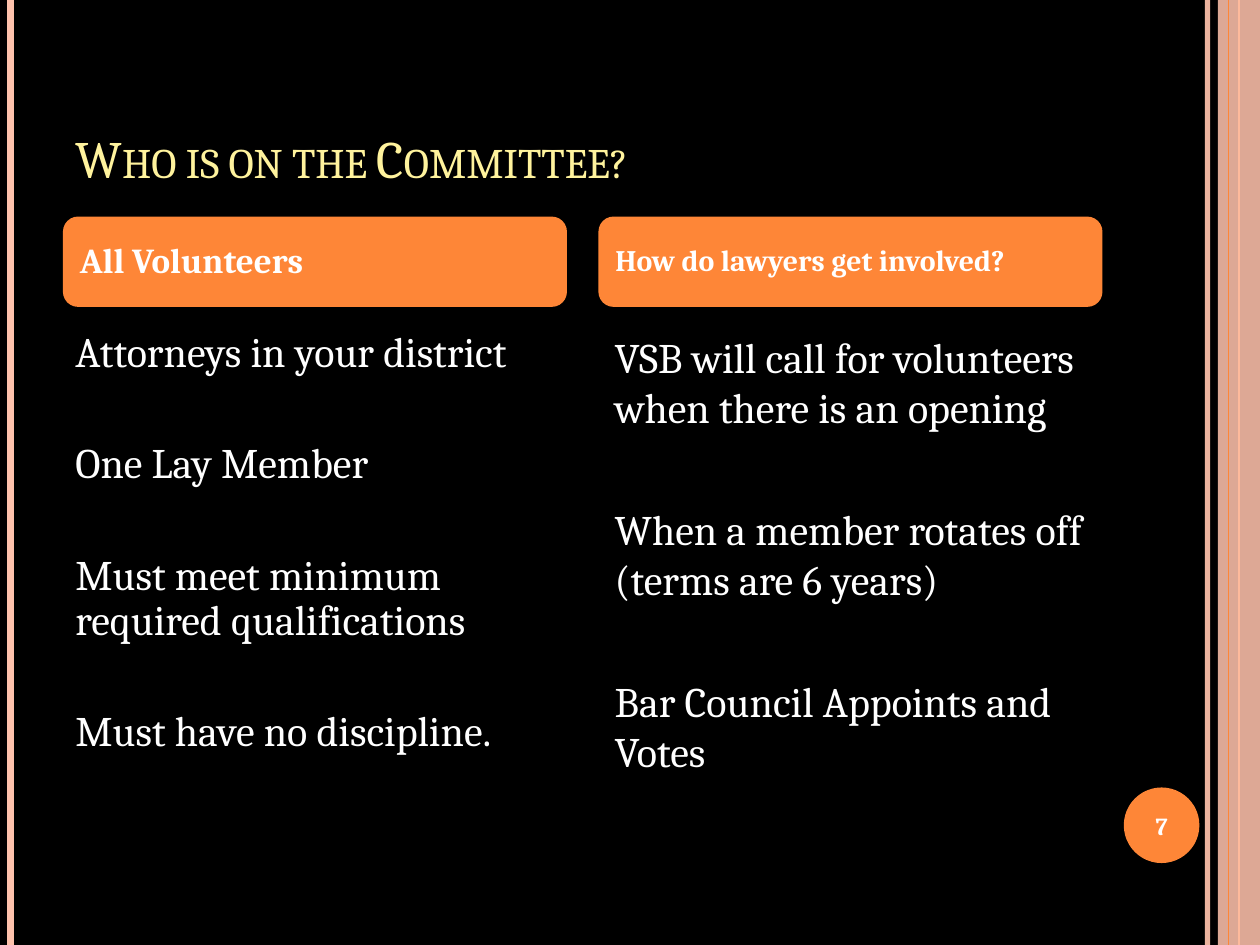
from pptx import Presentation
from pptx.dml.color import RGBColor as RGB
from pptx.enum.shapes import MSO_CONNECTOR as CONN, MSO_SHAPE as SHAPE
from pptx.enum.text import MSO_ANCHOR as ANCHOR, MSO_AUTO_SIZE as FIT, PP_ALIGN as ALIGN
from pptx.oxml.ns import qn
from pptx.util import Pt
from lxml import etree

COLORS = {"bg": "000000", "orange": "FE8637", "peach": "FEC2AC",
          "title": "FFF39D", "text": "FFFFFF"}
FONT = "Cambria"
W, H = 720, 540


def color(name):
    return RGB.from_string(COLORS[name])


def set_alpha(fill, percent):
    clr = fill._xPr.find(qn("a:solidFill"))[0]
    etree.SubElement(clr, qn("a:alpha")).set("val", str(percent * 1000))


def add_block(s, kind, box, fill):
    sp = s.shapes.add_shape(kind, *map(Pt, box))
    sp.shadow.inherit = False
    sp.fill.solid()
    sp.fill.fore_color.rgb = color(fill)
    sp.line.fill.background()
    return sp


def add_rule(s, x, name, width, alpha=None):
    ln = s.shapes.add_connector(CONN.STRAIGHT, Pt(x), 0, Pt(x), Pt(H))
    ln.line.width = Pt(width)
    ln.line.color.rgb = color(name)
    if alpha:
        set_alpha(ln.line.fill, alpha)
    etree.SubElement(ln._element.spPr, qn("a:effectLst"))


def write(tf, lines, size, anchor=ANCHOR.TOP, align=ALIGN.LEFT, name="text",
          bold=False, spacing=1.0, gap=0):
    frame = {"word_wrap": True, "auto_size": FIT.NONE, "vertical_anchor": anchor,
             "margin_left": Pt(7.2), "margin_right": Pt(7.2),
             "margin_top": Pt(3.6), "margin_bottom": Pt(3.6)}
    for key, value in frame.items():
        setattr(tf, key, value)
    for i, line in enumerate(lines):
        p = tf.paragraphs[0] if i == 0 else tf.add_paragraph()
        p.alignment, p.line_spacing = align, spacing
        p.space_before = Pt(gap if i else 0)
        r = p.add_run()
        r.text = line
        for key, value in {"name": FONT, "size": Pt(size), "bold": bold}.items():
            setattr(r.font, key, value)
        r.font.color.rgb = color(name)


def add_borders(s):
    add_rule(s, 690, "peach", 3, 93)
    add_rule(s, 6, "peach", 4.5)
    add_rule(s, 708, "orange", 1.5)
    band = add_block(s, SHAPE.RECTANGLE, (696, 0, W - 696, H), "peach")
    set_alpha(band.fill, 87)
    add_rule(s, 702, "orange", 0.75)


def add_title(s, box, text):
    sp = s.shapes.title
    sp.left, sp.top, sp.width, sp.height = map(Pt, box)
    write(sp.text_frame, [text], 30, ANCHOR.BOTTOM, name="title")
    sp.text_frame.paragraphs[0].runs[0].font._element.set("cap", "small")


def add_badge(s, box, number):
    add_block(s, SHAPE.OVAL, box, "orange")
    x, y, w, h = box
    tb = s.shapes.add_textbox(Pt(x - 2.4), Pt(y + 1.2), Pt(w + 4.8), Pt(h - 2.4))
    write(tb.text_frame, [number], 14, ANCHOR.MIDDLE, ALIGN.CENTER, bold=True)


def add_column(s, box, heading, size, items, spacing, gap, indent=0):
    x, y, w, h = box
    head_h, body_dy = 51.6, 62
    # Heading
    sp = add_block(s, SHAPE.ROUNDED_RECTANGLE, (x, y, w, head_h), "orange")
    sp.adjustments[0] = 0.167
    write(sp.text_frame, [heading], size, ANCHOR.MIDDLE, bold=True, spacing=0.9)
    # Statements
    tb = s.shapes.add_textbox(Pt(x + indent), Pt(y + body_dy), Pt(w), Pt(h - body_dy))
    write(tb.text_frame, items, 24, spacing=spacing, gap=gap)


def main():
    prs = Presentation()
    prs.slide_width, prs.slide_height = Pt(W), Pt(H)
    s = prs.slides.add_slide(prs.slide_layouts[5])
    s.background.fill.solid()
    s.background.fill.fore_color.rgb = color("bg")

    add_borders(s)
    add_title(s, (36, 21.6, 594, 90), "Who is on the Committee?")
    add_badge(s, (642.2, 450, 43.2, 43.2), "7")
    add_column(s, (36, 123.8, 288, 368), "All Volunteers", 20,
               ["Attorneys in your district", "One Lay Member",
                "Must meet minimum required qualifications",
                "Must have no discipline."], 0.9, 37.7)
    add_column(s, (342, 123.8, 288, 368), "How do lawyers get involved?", 17,
               ["VSB will call for volunteers when there is an opening",
                "When a member rotates off (terms are 6 years)",
                "Bar Council Appoints and Votes"], 1.0, 40.7, indent=2.2)
    prs.save("out.pptx")


if __name__ == "__main__":
    main()
